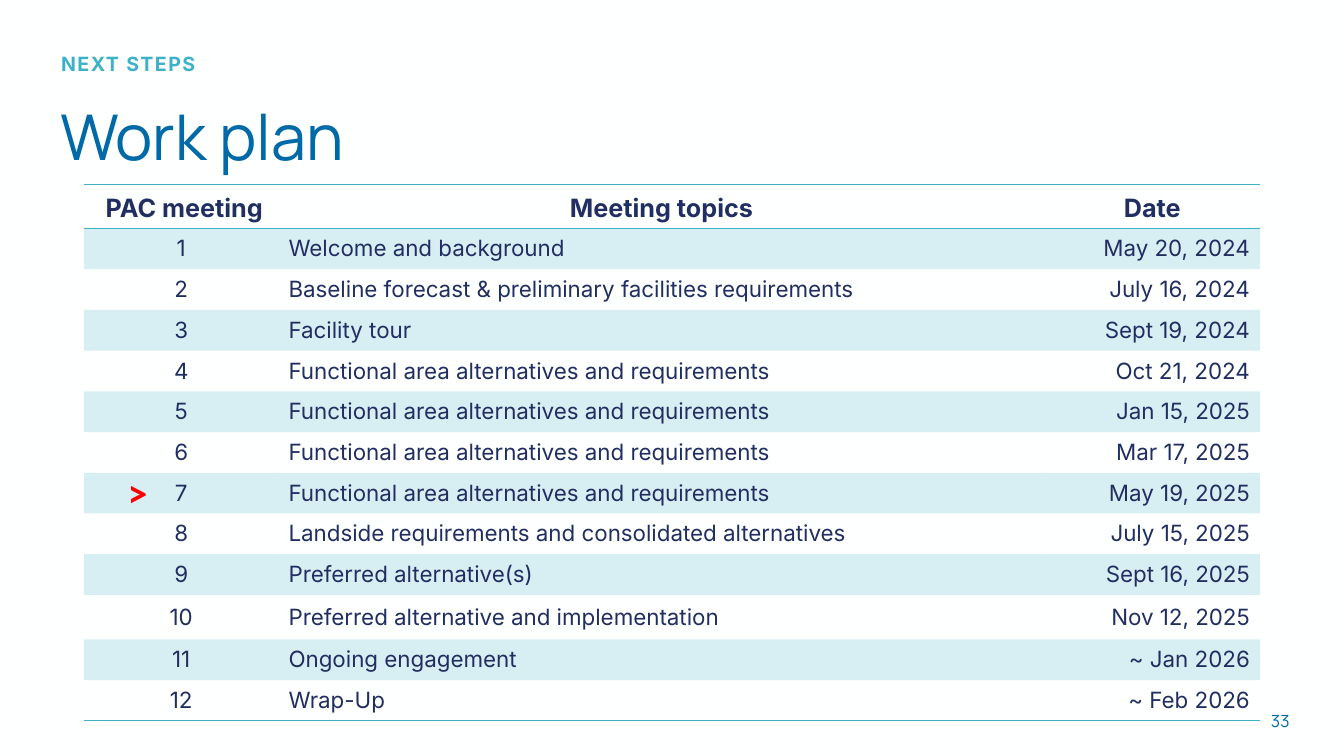
from pptx import Presentation
from pptx.dml.color import RGBColor as Rgb
from pptx.enum.text import MSO_ANCHOR as Anchor, MSO_AUTO_SIZE as Fit, PP_ALIGN as Align
from pptx.oxml.ns import qn
from pptx.oxml.xmlchemy import OxmlElement as Node
from pptx.util import Pt

PX = 3810
COLORS = {"paper": "FEFFFF", "teal": "3DB1C7", "navy": "202E61",
          "blue": "006AA8", "red": "FF0000"}
ALIGNS = [Align.CENTER, Align.LEFT, Align.RIGHT]
AREA = "Functional area alternatives and requirements"
HEADS = [" PAC meeting", "Meeting topics", "Date"]
PLAN = [
    ("Welcome and background", "May 20, 2024"),
    ("Baseline forecast & preliminary facilities requirements", "July 16, 2024"),
    ("Facility tour", "Sept 19, 2024"),
    (AREA, "Oct 21, 2024"),
    (AREA, "Jan 15, 2025"),
    (AREA, "Mar 17, 2025"),
    (AREA, "May 19, 2025"),
    ("Landside requirements and consolidated alternatives", "July 15, 2025"),
    ("Preferred alternative(s)", "Sept 16, 2025"),
    ("Preferred alternative and implementation", "Nov 12, 2025"),
    ("Ongoing engagement", "~ Jan 2026"),
    ("Wrap-Up", "~ Feb 2026"),
]


def write(frame, text, size=16, font="Inter", color="navy", bold=False,
          align=Align.LEFT, line=1.0, track=0):
    para = frame.paragraphs[0]
    para.alignment = align
    para.line_spacing = line
    para.space_before = Pt(0)
    run = para.add_run()
    run.text = text
    run.font.size = Pt(size)
    run.font.name = font
    run.font.bold = bold
    run.font.color.rgb = Rgb.from_string(COLORS[color])
    if track:
        run.font._element.set("spc", str(track * 100))


class Deck:
    """Holds the style and the current slide."""

    def __init__(self, wide, high):
        self.prs = Presentation()
        self.prs.slide_width, self.prs.slide_height = wide * PX, high * PX
        self.slide = self.prs.slides.add_slide(self.prs.slide_layouts[5])
        back = self.slide.background.fill
        back.solid()
        back.fore_color.rgb = Rgb.from_string(COLORS["paper"])

    def title(self, text, x, y, w, h, **style):
        shape = self.slide.shapes.title
        shape.left, shape.top, shape.width, shape.height = (n * PX for n in (x, y, w, h))
        frame = shape.text_frame
        frame.auto_size = Fit.NONE
        frame.vertical_anchor = Anchor.TOP
        write(frame, text, **style)

    def label(self, text, x, y, w, h, anchor=Anchor.TOP, pad=12, **style):
        box = self.slide.shapes.add_textbox(*(n * PX for n in (x, y, w, h)))
        frame = box.text_frame
        frame.word_wrap = True
        frame.vertical_anchor = anchor
        frame.margin_top = frame.margin_bottom = pad * PX
        write(frame, text, **style)

    def edges(self, cell, drawn):
        props = cell._tc.get_or_add_tcPr()
        for side in "LRTB":
            edge = Node(f"a:ln{side}")
            edge.set("w", str(Pt(1)))
            if side in drawn:
                fill = Node("a:solidFill")
                tint = Node("a:srgbClr")
                tint.set("val", COLORS["teal"])
                fill.append(tint)
            else:
                fill = Node("a:noFill")
            edge.append(fill)
            props.append(edge)

    def shade(self, cell):
        cell.fill.solid()
        cell.fill.fore_color.rgb = Rgb.from_string(COLORS["teal"])
        alpha = Node("a:alpha")
        alpha.set("val", "20000")
        cell._tc.tcPr.find(qn("a:solidFill"))[0].append(alpha)

    def table(self, rows, x, y, cols, highs):
        size = (x, y, sum(cols), sum(highs))
        grid = self.slide.shapes.add_table(
            len(rows), len(cols), *(n * PX for n in size)).table
        grid.first_row = grid.horz_banding = False
        for col, wide in zip(grid.columns, cols):
            col.width = wide * PX
        for i, (row, high) in enumerate(zip(rows, highs)):
            grid.rows[i].height = high * PX
            head = i == 0
            drawn = "TB" if head else "T" if i == 1 else "B" if i == len(rows) - 1 else ""
            for j, text in enumerate(row):
                cell = grid.cell(i, j)
                cell.vertical_anchor = Anchor.BOTTOM if head else Anchor.MIDDLE
                write(cell.text_frame, text, size=18 if head else 16, bold=head,
                      align=Align.CENTER if head else ALIGNS[j])
                self.edges(cell, drawn)
                if i % 2:
                    self.shade(cell)
                else:
                    cell.fill.background()


def main():
    deck = Deck(3200, 1800)
    rows = [HEADS] + [(str(n), *item) for n, item in enumerate(PLAN, 1)]
    highs = [105] + [106 if n == 10 else 97 for n in range(1, len(rows))]
    deck.table(rows, 200, 439, [463, 1824, 513], highs)
    deck.label("33", 2261, 1668, 833, 96, anchor=Anchor.MIDDLE,
               size=12, font="Manrope", color="blue", align=Align.RIGHT)
    deck.label("NEXT STEPS", 122, 118, 1560, 146,
               size=14, color="teal", bold=True, line=0.9, track=1)
    deck.title("Work plan", 120, 240, 2960, 180,
               size=45, font="Manrope", color="blue", line=0.9)
    deck.label(">", 281, 1114, 115, 113, pad=0,
               size=28, font="Calibri", color="red", bold=True)
    deck.prs.save("out.pptx")


if __name__ == "__main__":
    main()
